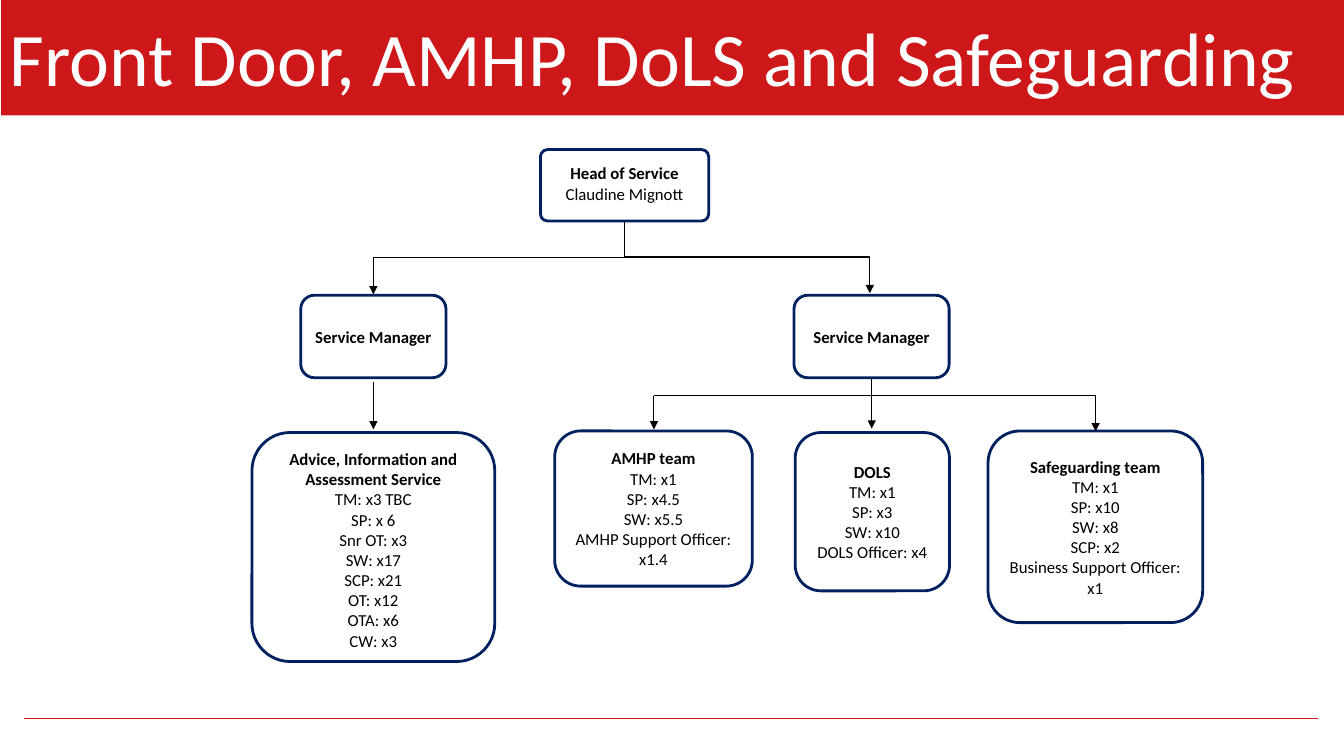
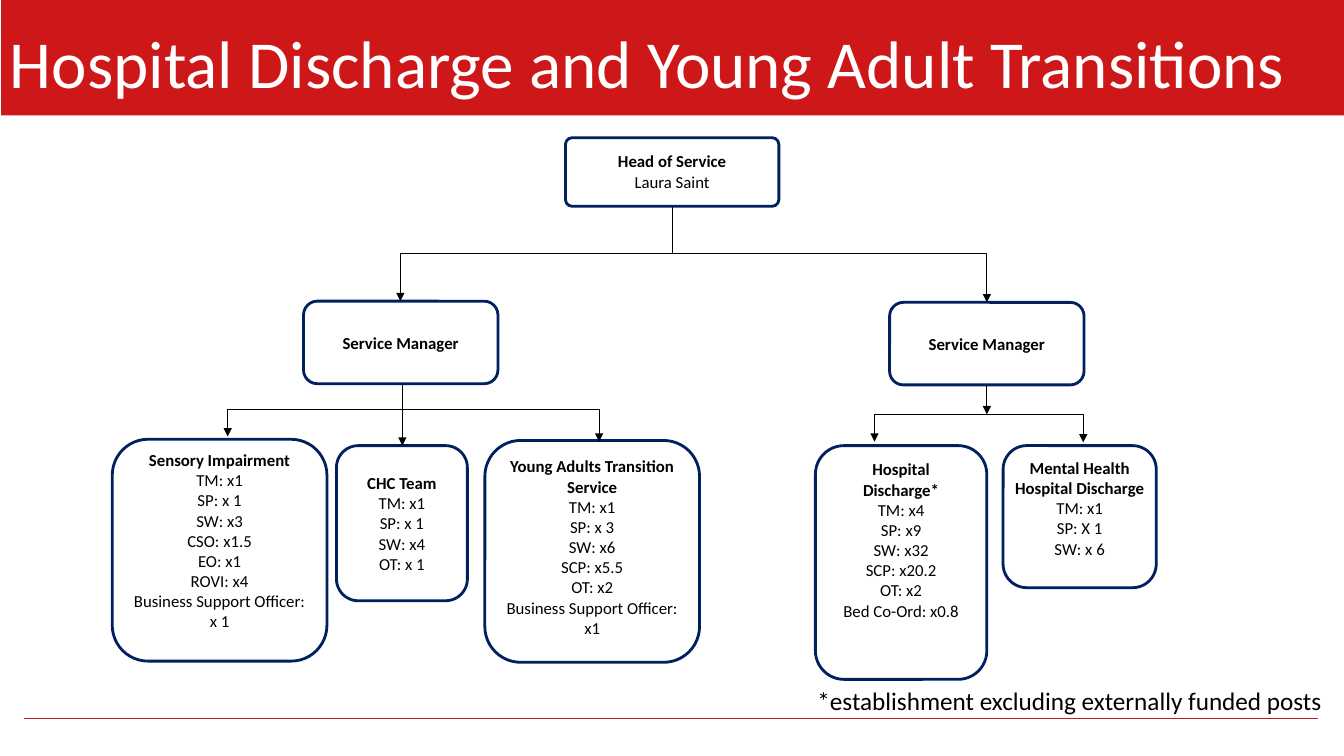
from dataclasses import dataclass

import pptx
import pptx.dml.color
import pptx.enum.shapes
import pptx.enum.text
import pptx.oxml.ns
import pptx.util
from lxml import etree

Cm = pptx.util.Cm
Pt = pptx.util.Pt
RGB = pptx.dml.color.RGBColor.from_string
SHAPE = pptx.enum.shapes.MSO_SHAPE
CONNECTOR = pptx.enum.shapes.MSO_CONNECTOR
ALIGN = pptx.enum.text.PP_ALIGN
ANCHOR = pptx.enum.text.MSO_ANCHOR
qn = pptx.oxml.ns.qn

SLIDE_W, SLIDE_H = 33.87, 19.05


@dataclass(frozen=True)
class Theme:
    font: str = "Calibri"
    band: str = "CD1719"
    rule: str = "CB1719"
    outline: str = "002060"
    ink: str = "000000"
    paper: str = "FFFFFF"
    box_size: float = 12
    note_size: float = 18
    outline_width: float = 2
    line_width: float = 0.75
    rule_width: float = 0.25


class OrgChart:
    """Draws organisation slides; all positions are in centimetres."""

    def __init__(self, prs, theme):
        self.prs = prs
        self.theme = theme
        self.s = None

    def new_slide(self, title, size):
        self.s = self.prs.slides.add_slide(self.prs.slide_layouts[6])
        self.line((0.61, 18.1), (33.22, 18.1), color=self.theme.rule,
                  width=self.theme.rule_width, arrow=False)
        sp = self.shape(SHAPE.RECTANGLE, 0.03, 0, SLIDE_W - 0.03, 2.91)
        sp.fill.solid()
        sp.fill.fore_color.rgb = RGB(self.theme.band)
        sp.line.fill.background()
        tf = self.text(0, 0, SLIDE_W, 2.57, title, size, self.theme.paper)
        tf.vertical_anchor = ANCHOR.BOTTOM
        tf.margin_bottom = 0

    def shape(self, kind, x, y, w, h):
        sp = self.s.shapes.add_shape(kind, Cm(x), Cm(y), Cm(w), Cm(h))
        sp.shadow.inherit = False
        return sp

    def run(self, p, text, size, color, bold=False):
        r = p.add_run()
        r.text = text
        r.font.name = self.theme.font
        r.font.size = Pt(size)
        r.font.bold = bold
        r.font.color.rgb = RGB(color)

    def text(self, x, y, w, h, text, size, color):
        tf = self.s.shapes.add_textbox(Cm(x), Cm(y), Cm(w), Cm(h)).text_frame
        tf.word_wrap = True
        self.run(tf.paragraphs[0], text, size, color)
        return tf

    def box(self, x, y, w, h, heading, *rows, anchor=ANCHOR.MIDDLE, top=0.13):
        """Rounded box with a bold heading above plain rows."""
        sp = self.shape(SHAPE.ROUNDED_RECTANGLE, x, y, w, h)
        sp.fill.background()
        sp.line.color.rgb = RGB(self.theme.outline)
        sp.line.width = Pt(self.theme.outline_width)
        tf = sp.text_frame
        tf.word_wrap = True
        tf.vertical_anchor = anchor
        tf.margin_top = Cm(top)
        for i, row in enumerate((heading, *rows)):
            p = tf.add_paragraph() if i else tf.paragraphs[0]
            p.alignment = ALIGN.CENTER
            self.run(p, row, self.theme.box_size, self.theme.ink, bold=i == 0)
        return sp

    def head(self, x, y, w, h, name):
        sp = self.box(x, y, w, h, "Head of Service", name,
                      anchor=ANCHOR.TOP, top=0.33)
        sp.adjustments[0] = 0.1
        for p in sp.text_frame.paragraphs:
            p.line_spacing = 0.9
            p.space_after = Pt(2)

    def manager(self, x, y, w):
        self.box(x, y, w, 2.08, "Service Manager")

    def line(self, start, end, kind=CONNECTOR.STRAIGHT, color=None,
             width=None, arrow=True):
        cn = self.s.shapes.add_connector(
            kind, *(Cm(v) for v in (*start, *end)))
        cn.line.color.rgb = RGB(color or self.theme.ink)
        cn.line.width = Pt(width or self.theme.line_width)
        sp_pr = cn._element.spPr
        if arrow:
            etree.SubElement(sp_pr.find(qn("a:ln")), qn("a:tailEnd"),
                             type="triangle")
        etree.SubElement(sp_pr, qn("a:effectLst"))
        cn._element.remove(cn._element.find(qn("p:style")))
        return sp_pr

    def elbow(self, start, end, width=None):
        """Arrow that runs across first and then down."""
        sp_pr = self.line(start, end, CONNECTOR.ELBOW, width=width)
        sp_pr.find(qn("a:prstGeom")).set("prst", "bentConnector2")

    def step_left(self, start, end):
        """Arrow that runs down, left and down: an elbow turned a quarter."""
        (x1, y1), (x2, y2) = start, end
        mid_x, mid_y = (x1 + x2) / 2, (y1 + y2) / 2
        half_w, half_h = (y2 - y1) / 2, (x1 - x2) / 2
        sp_pr = self.line((mid_x - half_w, mid_y - half_h),
                          (mid_x + half_w, mid_y + half_h), CONNECTOR.ELBOW)
        sp_pr.find(qn("a:xfrm")).set("rot", "5400000")


def front_door(c):
    c.new_slide("Front Door, AMHP, DoLS and Safeguarding", 54)
    c.head(13.62, 3.77, 4.24, 1.8, "Claudine Mignott")
    c.manager(7.58, 7.44, 3.66)
    c.manager(20.01, 7.44, 3.91)
    c.box(6.35, 10.9, 6.12, 5.77, "Advice, Information and Assessment Service",
          "TM: x3 TBC", "SP: x 6", "Snr OT: x3", "SW: x17", "SCP: x21",
          "OT: x12", "OTA: x6", "CW: x3", anchor=ANCHOR.TOP)
    c.box(13.98, 10.86, 4.98, 3.91, "AMHP team", "TM: x1", "SP: x4.5",
          "SW: x5.5", "AMHP Support Officer: x1.4")
    c.box(20.04, 10.9, 3.89, 3.99, "DOLS", "TM: x1", "SP: x3", "SW: x10",
          "DOLS Officer: x4")
    c.box(24.9, 10.86, 5.41, 4.83, "Safeguarding team", "TM: x1", "SP: x10",
          "SW: x8", "SCP: x2", "Business Support Officer: x1")

    c.step_left((15.73, 5.56), (9.41, 7.42))
    c.elbow((15.73, 6.48), (21.92, 7.39), width=1)
    c.line((9.41, 9.63), (9.41, 10.82))
    c.line((21.97, 9.53), (21.97, 10.8))
    c.line((16.48, 9.97), (27.61, 9.97), arrow=False)
    c.line((16.48, 9.97), (16.48, 10.82))
    c.line((27.61, 9.97), (27.61, 10.87))


def hospital_discharge(c):
    c.new_slide("Hospital Discharge and Young Adult Transitions", 48)
    c.head(14.25, 3.47, 5.38, 1.73, "Laura Saint")
    c.manager(7.65, 7.59, 4.9)
    c.manager(22.42, 7.62, 4.9)
    c.box(2.83, 11.07, 5.41, 5.59, "Sensory Impairment", "TM: x1", "SP: x 1",
          "SW: x3", "CSO: x1.5", "EO: x1", "ROVI: x4",
          "Business Support Officer: x 1", anchor=ANCHOR.TOP, top=0)
    c.box(8.48, 11.23, 3.3, 3.91, "CHC Team", "TM: x1", "SP: x 1", "SW: x4",
          "OT: x 1")
    c.box(12.22, 11.1, 5.41, 5.59, "Young Adults Transition Service",
          "TM: x1", "SP: x 3", "SW: x6", "SCP: x5.5", "OT: x2",
          "Business Support Officer: x1", anchor=ANCHOR.TOP)
    c.box(20.55, 11.23, 4.32, 5.89, "Hospital Discharge*", "TM: x4", "SP: x9",
          "SW: x32", "SCP: x20.2", "OT: x2", "Bed Co-Ord: x0.8",
          anchor=ANCHOR.TOP)
    mental = c.box(25.28, 11.23, 3.86, 3.58, "Mental Health Hospital Discharge",
                   "TM: x1", "SP: X 1", "SW: x 6", anchor=ANCHOR.TOP)
    mental.text_frame.margin_left = mental.text_frame.margin_right = Cm(0.1)

    c.step_left((16.94, 5.21), (10.09, 7.59))
    c.elbow((16.94, 6.4), (24.87, 7.62))
    c.line((10.14, 9.7), (10.14, 11.23))
    for tip in ((5.74, 11), (15.1, 11.13)):
        c.elbow((10.14, 10.31), tip)
    c.line((24.87, 9.7), (24.87, 10.44))
    for tip in ((22.04, 11.13), (27.3, 11.15)):
        c.elbow((24.87, 10.44), tip)
    c.text(20.35, 17.15, 13.5, 1.02,
           "*establishment excluding externally funded posts",
           c.theme.note_size, c.theme.ink)


def main():
    prs = pptx.Presentation()
    prs.slide_width, prs.slide_height = Cm(SLIDE_W), Cm(SLIDE_H)
    chart = OrgChart(prs, Theme())
    front_door(chart)
    hospital_discharge(chart)
    prs.save("out.pptx")


if __name__ == "__main__":
    main()
